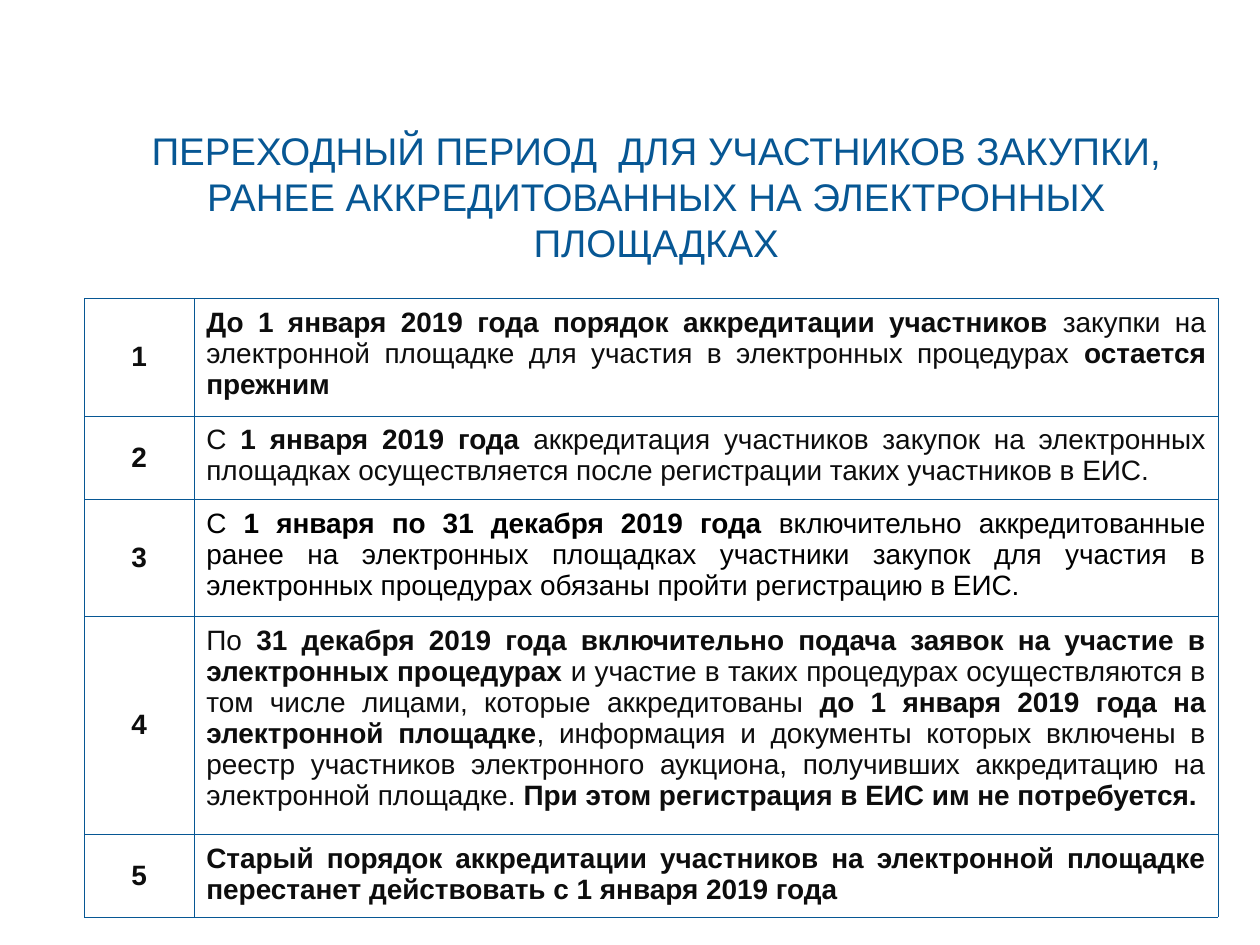
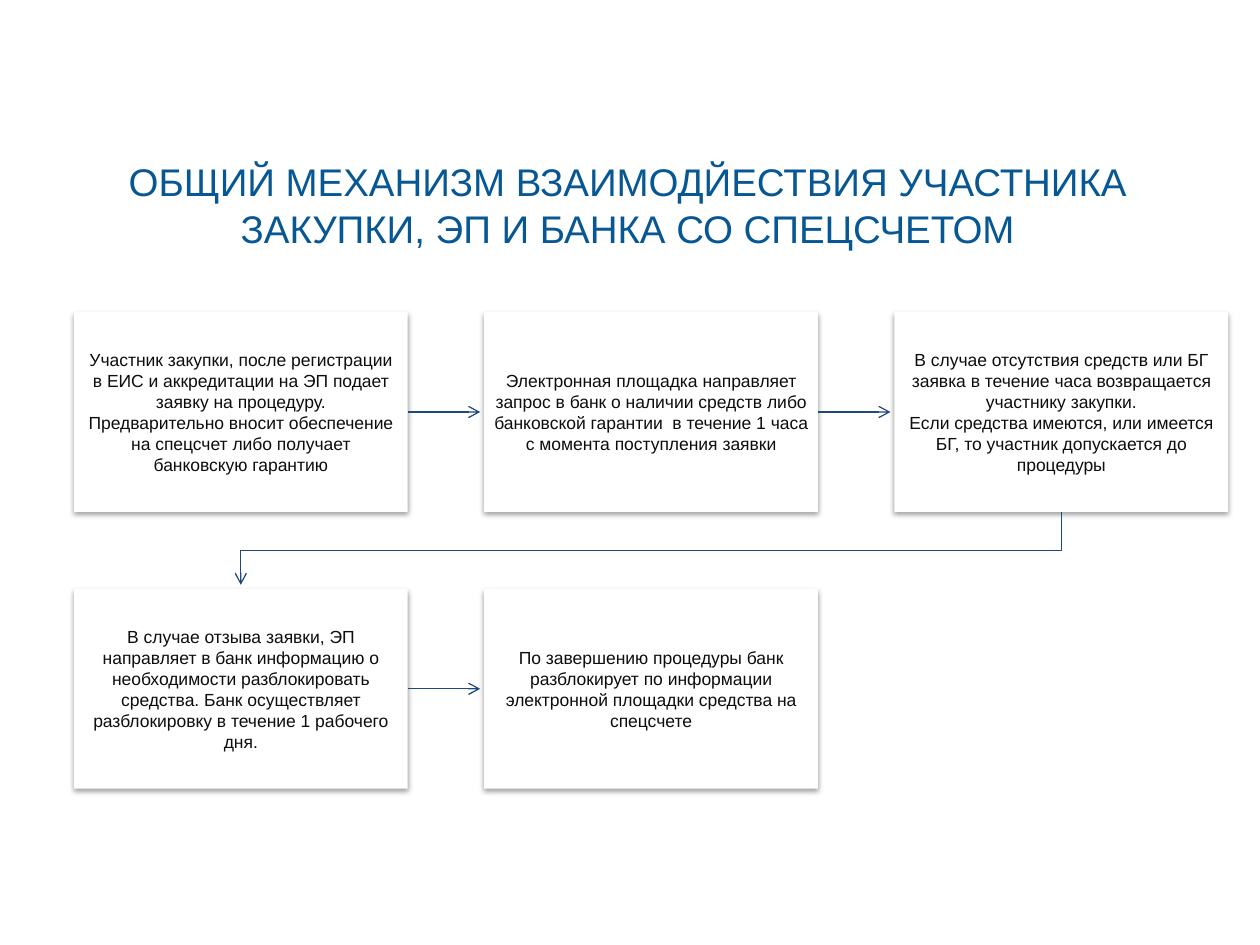
from lxml import etree
from pptx import Presentation
from pptx.dml.color import RGBColor
from pptx.enum.shapes import MSO_CONNECTOR, MSO_SHAPE
from pptx.enum.text import MSO_ANCHOR, MSO_AUTO_SIZE, PP_ALIGN
from pptx.oxml import parse_xml
from pptx.oxml.ns import nsdecls, qn
from pptx.util import Cm, Pt

RECT = MSO_SHAPE.RECTANGLE
STRAIGHT = MSO_CONNECTOR.STRAIGHT
MIDDLE, TOP = MSO_ANCHOR.MIDDLE, MSO_ANCHOR.TOP
CENTER, JUSTIFY = PP_ALIGN.CENTER, PP_ALIGN.JUSTIFY
NO_AUTOFIT = MSO_AUTO_SIZE.NONE
TITLE_ONLY = 5
RIGHT_SIDE = 3

FONT = "Arial"
BLUE, NAVY, INK, BLACK, WHITE = "075794", "1F497D", "0D0D0D", "000000", "FFFFFF"

# Asterisks enclose the bold parts of each rule
RULES = [
    (2.36, INK, "*До 1 января 2019 года порядок аккредитации участников *закупки на "
     "электронной площадке для участия в электронных процедурах *остается прежним*"),
    (1.68, INK, "С *1 января 2019 года *аккредитация участников закупок на электронных "
     "площадках осуществляется после регистрации таких участников в ЕИС."),
    (2.36, BLACK, "С *1 января по 31 декабря 2019 года* включительно аккредитованные ранее "
     "на электронных площадках участники закупок для участия в электронных процедурах "
     "обязаны пройти регистрацию в ЕИС."),
    (4.39, INK, "По *31 декабря 2019 года включительно подача заявок на участие в "
     "электронных процедурах *и участие в таких процедурах осуществляются в том числе "
     "лицами, которые аккредитованы *до 1 января 2019 года на электронной площадке*, "
     "информация и документы которых включены в реестр участников электронного аукциона, "
     "получивших аккредитацию на электронной площадке. *При этом регистрация в ЕИС им "
     "не потребуется.*"),
    (1.68, INK, "*Старый порядок аккредитации участников на электронной площадке "
     "перестанет действовать с 1 января 2019 года*"),
]

STEPS = [
    ["Участник закупки, после регистрации в ЕИС и аккредитации на ЭП подает заявку "
     "на процедуру.",
     "Предварительно вносит обеспечение на спецсчет либо получает банковскую гарантию"],
    ["Электронная площадка направляет запрос в банк о наличии средств либо банковской "
     "гарантии  в течение 1 часа с момента поступления заявки"],
    ["В случае отсутствия средств или БГ заявка в течение часа возвращается участнику "
     "закупки.",
     "Если средства имеются, или имеется БГ, то участник допускается до процедуры"],
    ["В случае отзыва заявки, ЭП направляет в банк информацию о необходимости "
     "разблокировать средства. Банк осуществляет разблокировку в течение 1 рабочего дня."],
    ["По завершению процедуры банк разблокирует по информации электронной площадки "
     "средства на спецсчете"],
]


def rgb(value):
    return RGBColor.from_string(value)


def write(frame, paragraphs, size=10, color=INK, align=CENTER):
    """Fill a text frame; parts between asterisks become bold."""
    frame.word_wrap = True
    for number, content in enumerate(paragraphs):
        paragraph = frame.add_paragraph() if number else frame.paragraphs[0]
        paragraph.alignment = align
        for part, text in enumerate(content.split("*")):
            if not text:
                continue
            run = paragraph.add_run()
            run.text = text
            run.font.name = FONT
            run.font.size = Pt(size)
            run.font.bold = part % 2 == 1
            run.font.color.rgb = rgb(color)


def add_titled_slide(deck, heading, box):
    slide = deck.slides.add_slide(deck.slide_layouts[TITLE_ONLY])
    title = slide.shapes.title
    title.left, title.top, title.width, title.height = (Cm(n) for n in box)
    title.text_frame.auto_size = NO_AUTOFIT
    title.text_frame.vertical_anchor = MIDDLE
    write(title.text_frame, [heading], size=22, color=BLUE)
    return slide


# Table of rules
def format_cell(cell, content, color, align, anchor):
    cell.margin_left = cell.margin_right = Cm(0.25)
    cell.margin_top = cell.margin_bottom = Cm(0.18)
    cell.vertical_anchor = anchor
    cell.fill.background()
    write(cell.text_frame, [content], size=16, color=color, align=align)
    properties = cell._tc.get_or_add_tcPr()
    for index, side in enumerate("LRTB"):
        properties.insert(index, parse_xml(
            f'<a:ln{side} {nsdecls("a")} w="{Pt(0.25)}"><a:solidFill>'
            f'<a:srgbClr val="{BLUE}"/></a:solidFill></a:ln{side}>'))


def add_rules_table(slide, left, top, widths):
    heights = [height for height, _, _ in RULES]
    table = slide.shapes.add_table(len(RULES), len(widths), Cm(left), Cm(top),
                                   Cm(sum(widths)), Cm(sum(heights))).table
    table.first_row = table.horz_banding = False
    for column, width in zip(table.columns, widths):
        column.width = Cm(width)
    for index, (height, color, rule) in enumerate(RULES):
        table.rows[index].height = Cm(height)
        format_cell(table.cell(index, 0), f"*{index + 1}*", INK, CENTER, MIDDLE)
        format_cell(table.cell(index, 1), rule, color, JUSTIFY, TOP)


# Flow of steps
def add_step(slide, left, top, width, height, paragraphs):
    step = slide.shapes.add_shape(RECT, Cm(left), Cm(top), Cm(width), Cm(height))
    step.fill.solid()
    step.fill.fore_color.rgb = rgb(WHITE)
    step.line.fill.background()
    step.shadow.inherit = False
    step._element.spPr.find(qn("a:effectLst")).append(parse_xml(
        f'<a:outerShdw {nsdecls("a")} blurRad="{Pt(3.1)}" dist="{Pt(1.6)}" dir="5400000" '
        f'rotWithShape="0"><a:srgbClr val="{BLACK}"><a:alpha val="38000"/></a:srgbClr>'
        '</a:outerShdw>'))
    frame = step.text_frame
    frame.margin_left = frame.margin_right = Cm(0.2)
    frame.margin_top = frame.margin_bottom = Cm(0.2)
    frame.vertical_anchor = MIDDLE
    write(frame, paragraphs)
    return step


def style_arrow(arrow):
    arrow.line.color.rgb = rgb(NAVY)
    arrow.line.width = Pt(0.75)
    etree.SubElement(arrow.line._get_or_add_ln(), qn("a:tailEnd"), type="arrow")
    etree.SubElement(arrow._element.spPr, qn("a:effectLst"))


def add_straight_arrow(slide, step, length):
    start, middle = step.left + step.width, step.top + step.height // 2
    arrow = slide.shapes.add_connector(STRAIGHT, start, middle, start + Cm(length), middle)
    arrow.begin_connect(step, RIGHT_SIDE)
    style_arrow(arrow)


def add_return_arrow(slide, last, following, clearance):
    start_x = last.left + last.width // 2
    end_x = following.left + following.width // 2
    bottom = last.top + last.height
    bend = (bottom + following.top) // 2
    builder = slide.shapes.build_freeform(start_x, bottom)
    builder.add_line_segments([(start_x, bend), (end_x, bend),
                               (end_x, following.top - Cm(clearance))], close=False)
    arrow = builder.convert_to_shape()
    arrow.fill.background()
    style_arrow(arrow)


def add_flow(slide, left, top, columns=3):
    width, height, gap_x, gap_y, clearance = 6.73, 4.03, 1.54, 1.55, 0.08
    steps = []
    for index, paragraphs in enumerate(STEPS):
        row, column = divmod(index, columns)
        steps.append(add_step(slide, left + column * (width + gap_x),
                              top + row * (height + gap_y), width, height, paragraphs))
    for index, step in enumerate(steps[:-1]):
        if (index + 1) % columns:
            add_straight_arrow(slide, step, gap_x - clearance)
        else:
            add_return_arrow(slide, step, steps[index + 1], clearance)


def main():
    deck = Presentation()
    deck.slide_width, deck.slide_height = Cm(25.4), Cm(19.05)

    transition = add_titled_slide(
        deck, "ПЕРЕХОДНЫЙ ПЕРИОД  ДЛЯ УЧАСТНИКОВ ЗАКУПКИ, РАНЕЕ АККРЕДИТОВАННЫХ "
        "НА ЭЛЕКТРОННЫХ ПЛОЩАДКАХ", (1.7, 2.72, 23.06, 2.46))
    add_rules_table(transition, 1.7, 6.02, (2.21, 20.65))

    mechanism = add_titled_slide(
        deck, "ОБЩИЙ МЕХАНИЗМ ВЗАИМОДЙЕСТВИЯ УЧАСТНИКА ЗАКУПКИ, ЭП И БАНКА "
        "СО СПЕЦСЧЕТОМ", (0.69, 2.92, 23.93, 2.41))
    add_flow(mechanism, 1.49, 6.29)

    deck.save("out.pptx")


if __name__ == "__main__":
    main()
